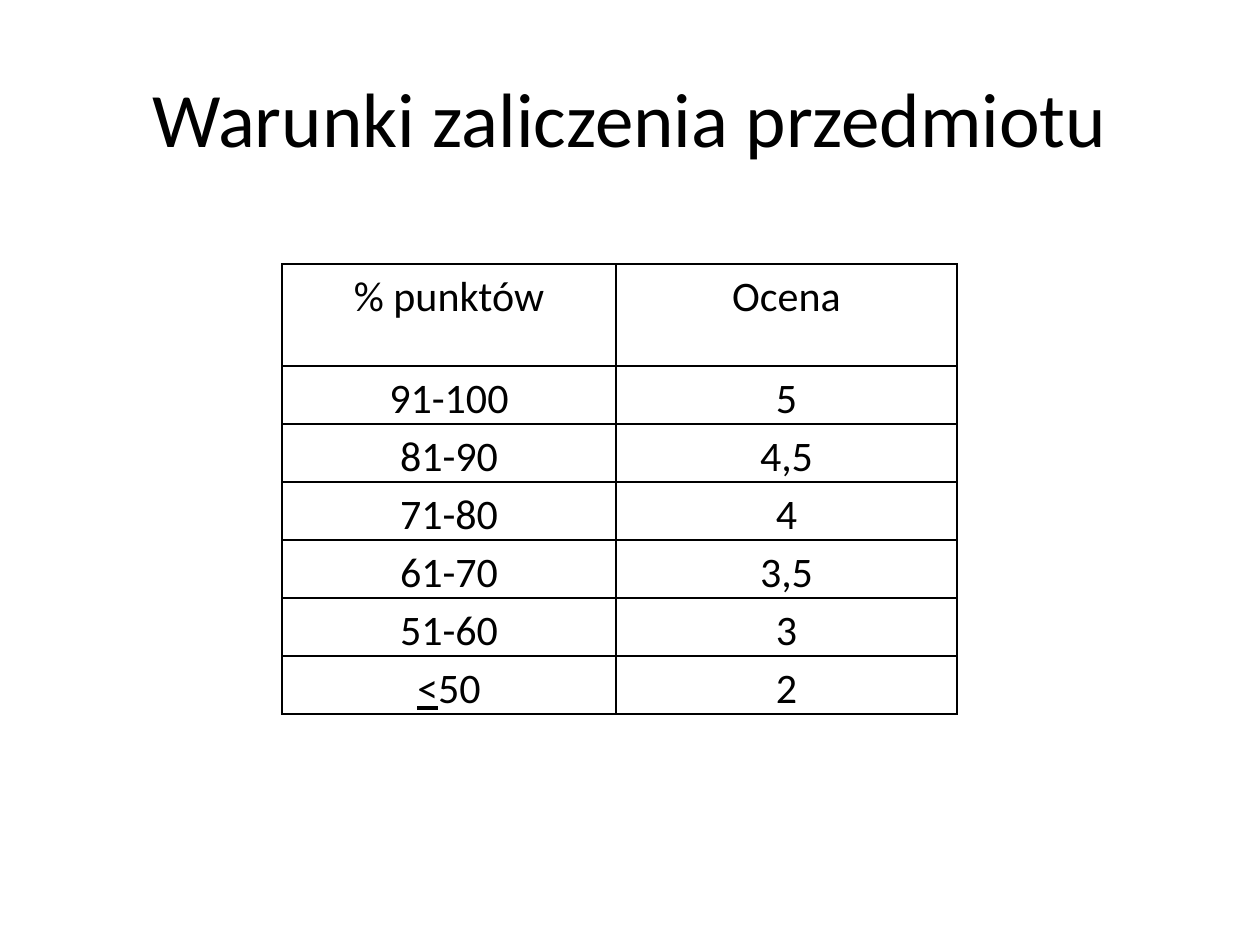
from typing import NamedTuple

from lxml import etree
from pptx import Presentation
from pptx.dml.color import RGBColor
from pptx.enum.text import MSO_ANCHOR, PP_ALIGN
from pptx.oxml.ns import qn
from pptx.util import Emu, Pt

PX_PER_INCH = 126
EMU_PER_INCH = 914400
BLACK = RGBColor(0x00, 0x00, 0x00)
FONT = "Calibri"
CENTER = PP_ALIGN.CENTER
TOP = MSO_ANCHOR.TOP
MIDDLE = MSO_ANCHOR.MIDDLE

COLUMN_WIDTHS = (334, 341)
HEADER_HEIGHT = 102
GRADE_HEIGHT = 51
CELL_MARGIN = 9
BORDER_TAGS = ("a:lnL", "a:lnR", "a:lnT", "a:lnB")


class Span(NamedTuple):
    text: str
    underline: bool = False


class GradeRow(NamedTuple):
    points: tuple[Span, ...]
    grade: str


HEADER = GradeRow((Span("% punktów"),), "Ocena")
GRADES = (
    GradeRow((Span("91-100"),), "5"),
    GradeRow((Span("81-90"),), "4,5"),
    GradeRow((Span("71-80"),), "4"),
    GradeRow((Span("61-70"),), "3,5"),
    GradeRow((Span("51-60"),), "3"),
    GradeRow((Span("<", underline=True), Span("50")), "2"),
)


def px(length: int) -> Emu:
    return Emu(round(length * EMU_PER_INCH / PX_PER_INCH))


def write_spans(para, spans: tuple[Span, ...], size: int) -> None:
    para.alignment = CENTER
    for span in spans:
        run = para.add_run()
        run.text = span.text
        run.font.name = FONT
        run.font.size = Pt(size)
        run.font.color.rgb = BLACK
        if span.underline:
            run.font.underline = True


def add_title(page, text: str) -> None:
    box = page.shapes.add_textbox(px(63), px(38), px(1134), px(158))
    frame = box.text_frame
    frame.word_wrap = True
    frame.vertical_anchor = MIDDLE
    write_spans(frame.paragraphs[0], (Span(text),), 44)


def add_borders(cell) -> None:
    """Draw a thin line on all four sides; lines must come before the fill."""
    properties = cell._tc.get_or_add_tcPr()
    for position, tag in enumerate(BORDER_TAGS):
        line = etree.Element(qn(tag), w=str(Pt(1)))
        fill = etree.SubElement(line, qn("a:solidFill"))
        etree.SubElement(fill, qn("a:srgbClr"), val=str(BLACK))
        properties.insert(position, line)


def fill_cell(cell, spans: tuple[Span, ...], anchor: MSO_ANCHOR) -> None:
    cell.margin_left = cell.margin_right = px(CELL_MARGIN)
    cell.margin_top = cell.margin_bottom = 0
    cell.vertical_anchor = anchor
    cell.fill.background()
    add_borders(cell)
    para = cell.text_frame.paragraphs[0]
    para.line_spacing = 1.15
    write_spans(para, spans, 24)


def add_grade_table(page) -> None:
    rows = (HEADER, *GRADES)
    height = HEADER_HEIGHT + GRADE_HEIGHT * len(GRADES)
    table = page.shapes.add_table(
        len(rows), len(COLUMN_WIDTHS),
        px(282), px(264), px(sum(COLUMN_WIDTHS)), px(height),
    ).table
    table.first_row = False
    table.horz_banding = False
    for column, width in zip(table.columns, COLUMN_WIDTHS):
        column.width = px(width)
    for index, row in enumerate(rows):
        is_header = index == 0
        table.rows[index].height = px(HEADER_HEIGHT if is_header else GRADE_HEIGHT)
        fill_cell(table.cell(index, 0), row.points, TOP if is_header else MIDDLE)
        fill_cell(table.cell(index, 1), (Span(row.grade),), TOP)


def main() -> None:
    deck = Presentation()
    deck.slide_width = px(1260)
    deck.slide_height = px(945)
    page = deck.slides.add_slide(deck.slide_layouts[6])
    add_title(page, "Warunki zaliczenia przedmiotu")
    add_grade_table(page)
    deck.save("out.pptx")


if __name__ == "__main__":
    main()
